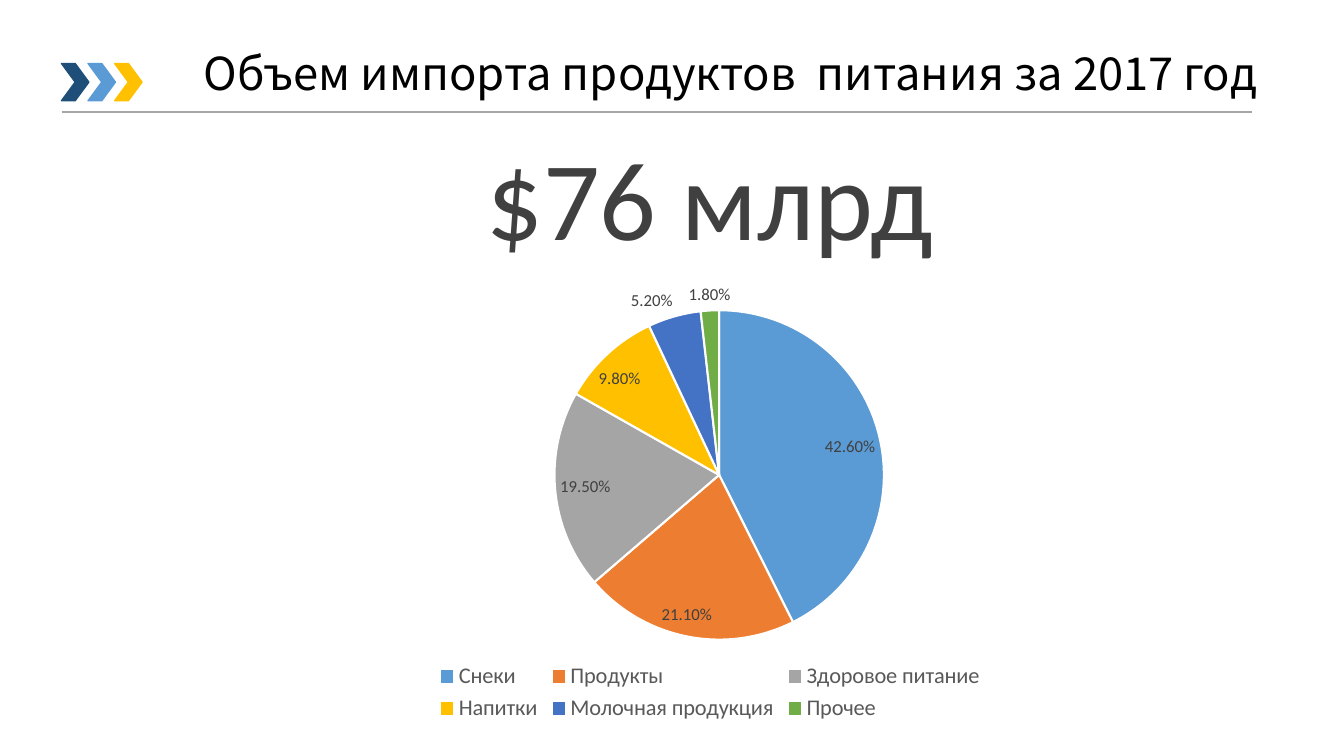
from dataclasses import dataclass
from typing import Any

from lxml.etree import SubElement as Sub
from pptx import Presentation
from pptx.chart.data import CategoryChartData as Data
from pptx.dml.color import RGBColor
from pptx.enum.chart import XL_CHART_TYPE as Kind
from pptx.enum.chart import XL_LABEL_POSITION as Spot
from pptx.enum.chart import XL_LEGEND_POSITION as Side
from pptx.enum.shapes import MSO_CONNECTOR as Link
from pptx.enum.shapes import MSO_SHAPE as Form
from pptx.enum.text import MSO_ANCHOR as Anchor
from pptx.enum.text import PP_ALIGN as Align
from pptx.oxml.ns import qn
from pptx.util import Cm, Pt


@dataclass
class Box:
    left: float
    top: float
    width: float
    height: float

    def area(self) -> list[Cm]:
        return [Cm(v) for v in (self.left, self.top, self.width, self.height)]


@dataclass
class Label:
    text: str
    box: Box
    font: dict[str, Any]
    tone: str
    frame: dict[str, Any]
    para: dict[str, Any]


@dataclass
class Slice:
    name: str
    share: float
    tone: str


LABELS = [
    Label("Объем импорта продуктов  питания за 2017 год",
          Box(4.62, 1.02, 29.24, 1.8),
          {"name": "Noto Sans CJK SC", "size": Pt(32.4)}, "000000",
          {"vertical_anchor": Anchor.MIDDLE, "margin_left": Cm(0.51)},
          {"line_spacing": 0.9}),
    Label("$76 млрд", Box(7.24, 3.12, 21.31, 3.68),
          {"name": "Calibri", "size": Pt(80)}, "404040",
          {}, {"alignment": Align.CENTER}),
]
ARROWS = ["1F4E79", "5B9BD5", "FFC000"]
SLICES = [
    Slice("Снеки", 0.426, "5B9BD5"),
    Slice("Продукты", 0.211, "ED7D31"),
    Slice("Здоровое питание", 0.195, "A5A5A5"),
    Slice("Напитки", 0.098, "FFC000"),
    Slice("Молочная продукция", 0.052, "4472C4"),
    Slice("Прочее", 0.018, "70AD47"),
]
PLOT = {"layoutTarget": "inner", "xMode": "edge", "yMode": "edge",
        "x": "0.33", "y": "0.09", "w": "0.36", "h": "0.72"}


def put(obj: Any, vals: dict[str, Any]) -> None:
    for key, val in vals.items():
        setattr(obj, key, val)


def ink(obj: Any, tone: str) -> None:
    obj.rgb = RGBColor.from_string(tone)


def paint(fill: Any, tone: str) -> None:
    fill.solid()
    ink(fill.fore_color, tone)


def style(font: Any, size: float, tone: str) -> None:
    put(font, {"name": "Calibri", "size": Pt(size)})
    ink(font.color, tone)


def write(slide: Any, label: Label) -> None:
    frame = slide.shapes.add_textbox(*label.box.area()).text_frame
    put(frame, {"word_wrap": True} | label.frame)
    para = frame.paragraphs[0]
    put(para, label.para)
    run = para.add_run()
    run.text = label.text
    put(run.font, label.font)
    ink(run.font.color, label.tone)


def arrow(slide: Any, box: Box, tone: str) -> None:
    shape = slide.shapes.add_shape(Form.CHEVRON, *box.area())
    shape.shadow.inherit = False
    paint(shape.fill, tone)
    paint(shape.line.fill, tone)
    shape.line.width = Pt(1)


def rule(slide: Any, left: float, right: float, top: float) -> None:
    line = slide.shapes.add_connector(
        Link.STRAIGHT, Cm(left), Cm(top), Cm(right), Cm(top))
    paint(line.line.fill, "A6A6A6")
    line.line.width = Pt(1.5)
    Sub(line.element.spPr, qn("a:effectLst"))


def place(chart: Any) -> None:
    area = chart.element.find(".//" + qn("c:plotArea"))
    old = area.find(qn("c:layout"))
    if old is not None:
        area.remove(old)
    lay = Sub(area, qn("c:layout"))
    area.insert(0, lay)
    man = Sub(lay, qn("c:manualLayout"))
    for key, val in PLOT.items():
        Sub(man, qn("c:" + key)).set("val", val)


def pie(slide: Any, box: Box, parts: list[Slice]) -> None:
    data = Data(number_format="0.00%")
    data.categories = [part.name for part in parts]
    data.add_series("Series 1", [part.share for part in parts])
    chart = slide.shapes.add_chart(Kind.PIE, *box.area(), data).chart
    put(chart, {"has_title": False, "has_legend": True})
    style(chart.font, 10, "000000")
    put(chart.legend, {"position": Side.BOTTOM, "include_in_layout": False})
    style(chart.legend.font, 16, "595959")
    plot = chart.plots[0]
    put(plot, {"vary_by_categories": True, "has_data_labels": True})
    put(plot.data_labels, {
        "show_value": True, "show_percentage": False,
        "number_format": "0.00%", "number_format_is_linked": False,
        "position": Spot.BEST_FIT})
    style(plot.data_labels.font, 12, "404040")
    for num, part in enumerate(parts):
        form = plot.series[0].points[num].format
        paint(form.fill, part.tone)
        paint(form.line.fill, "FFFFFF")
        form.line.width = Pt(1.5)
    place(chart)


def main() -> None:
    deck = Presentation()
    put(deck, {"slide_width": Cm(33.87), "slide_height": Cm(19.05)})
    slide = deck.slides.add_slide(deck.slide_layouts[6])
    for label in LABELS:
        write(slide, label)
    for num, tone in enumerate(ARROWS):
        arrow(slide, Box(1.55 + 0.67 * num, 1.6, 0.69, 0.94), tone)
    rule(slide, 1.55, 31.55, 2.82)
    pie(slide, Box(6.35, 6.78, 23.09, 11.53), SLICES)
    deck.save("out.pptx")


if __name__ == "__main__":
    main()
